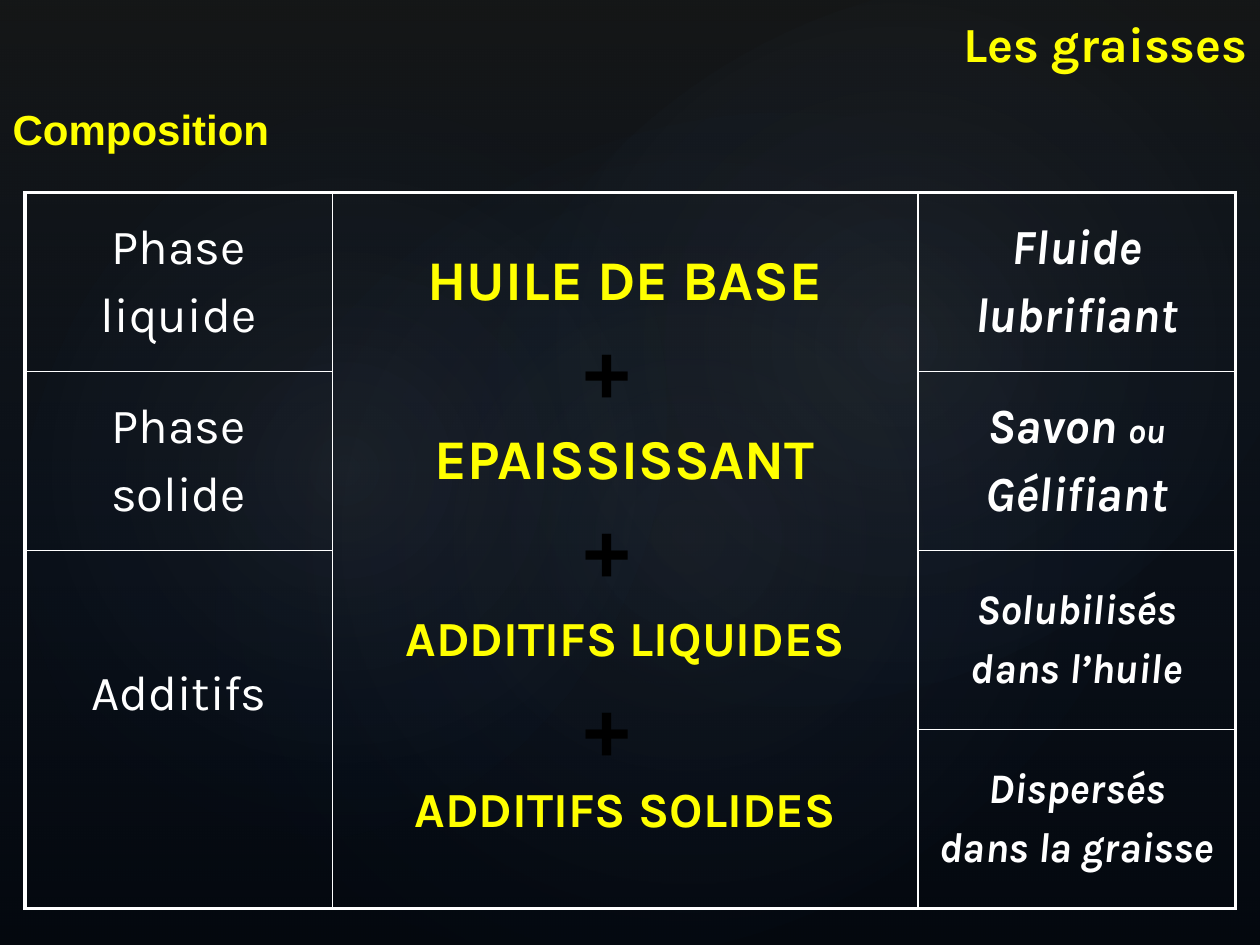
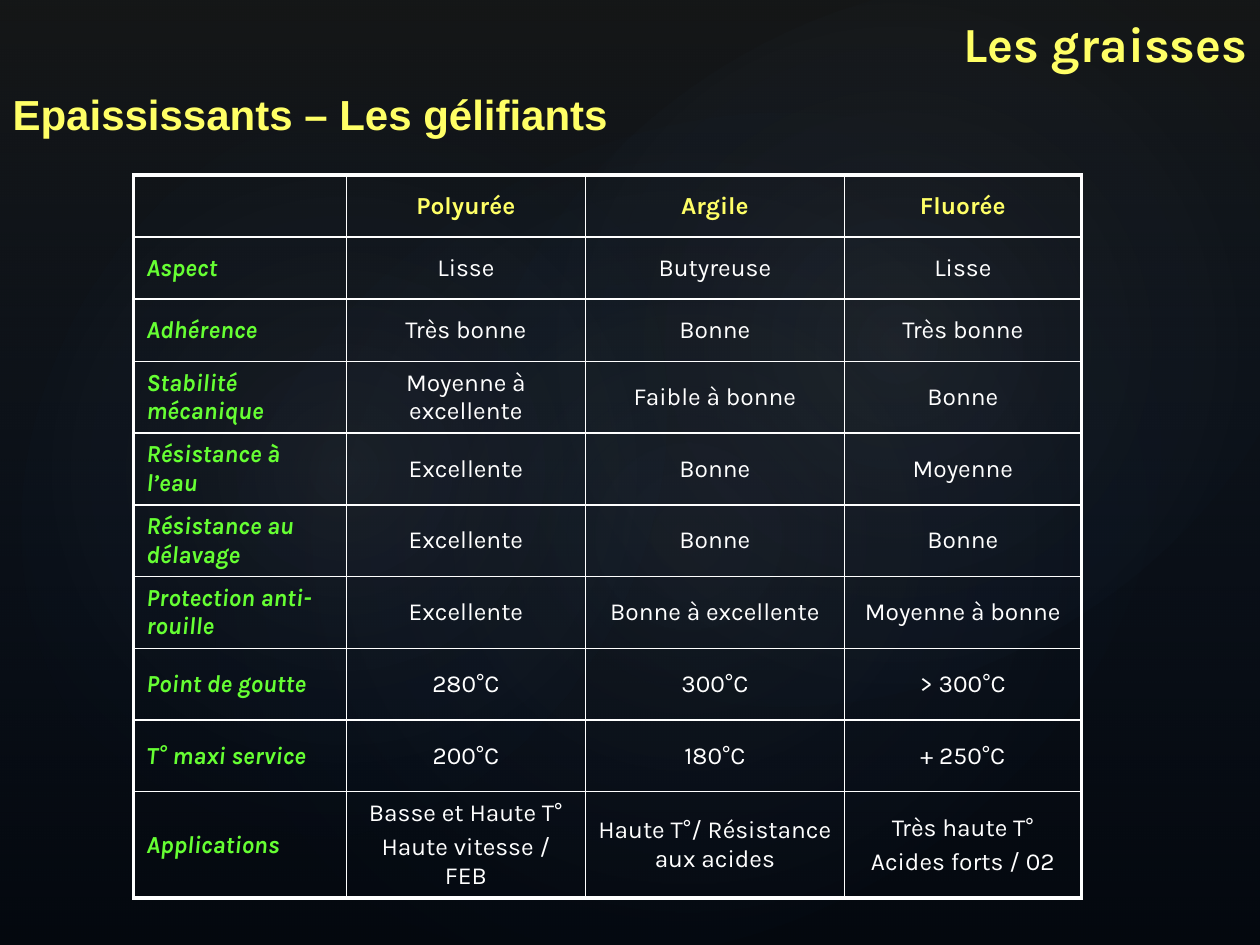
"""Build two slides on the composition and the thickeners of greases."""
from lxml import etree
from pptx import Presentation
from pptx import util as u
from pptx.dml.color import RGBColor
from pptx.enum import shapes, text
from pptx.oxml import ns, parse_xml

Pt = u.Pt
HUES = {"black": "000000", "white": "FFFFFF", "yellow": "FFFF00", "lemon": "FFFF66",
        "green": "66FF33", "grey": "3B4042", "blue": "2F5897", "mist": "ACB3B6"}
PLAIN = "{2D5ABB26-0587-4C30-8999-92F81FD0307C}"
HEAD = "Les graisses"

PARTS = [
    ("Phase\nliquide", "HUILE DE BASE", "Fluide\nlubrifiant"),
    ("Phase\nsolide", "EPAISSISSANT", "Savon \nGélifiant"),
    ("Additifs", "ADDITIFS LIQUIDES", "Solubilisés\ndans l’huile"),
    ("", "ADDITIFS SOLIDES", "Dispersés\ndans la graisse"),
]
SIZES = [(28, 32, 28), (28, 32, 28), (28, 28, 24), (28, 28, 24)]
OPEN = {(0, 1), (1, 1), (2, 1), (2, 0)}

GELS = [
    ("", "Polyurée", "Argile", "Fluorée"),
    ("Aspect", "Lisse", "Butyreuse", "Lisse"),
    ("Adhérence", "Très bonne", "Bonne", "Très bonne"),
    ("Stabilité mécanique", "Moyenne à excellente", "Faible à bonne", "Bonne"),
    ("Résistance à l’eau", "Excellente", "Bonne", "Moyenne"),
    ("Résistance au délavage", "Excellente", "Bonne", "Bonne"),
    ("Protection anti-rouille", "Excellente", "Bonne à excellente", "Moyenne à bonne"),
    ("Point de goutte", "280°C", "300°C", "> 300°C"),
    ("T° maxi service", "200°C", "180°C", "+ 250°C"),
    ("Applications", "Basse et Haute T°\nHaute vitesse / FEB",
     "Haute T°/ Résistance aux acides", "Très haute T°\nAcides forts / 02"),
]

GLOWS = [
    ((108, 82, 570, 449), 328.7, 7),
    ((-21.6, 92, 436, 353), 294.3, 8),
    ((257.8, 9.4, 510.5, 374.4), 328.7, 8),
]


def style(run, hue, **form):
    run.font.color.rgb = RGBColor.from_string(HUES[hue])
    for key, val in form.items():
        setattr(run.font, key, val)


def write(frame, words, align, gap=0, **form):
    frame.vertical_anchor = text.MSO_ANCHOR.MIDDLE
    for num, line in enumerate(words.split("\n")):
        para = frame.add_paragraph() if num else frame.paragraphs[0]
        para.alignment = align
        para.space_before = Pt(gap)
        run = para.add_run()
        run.text = line
        style(run, **form)


def blend(shape, stops, tail):
    shape.shadow.inherit = False
    shape.line.fill.background()
    shape.fill.background()
    body = "".join(
        f'<a:gs pos="{pos * 1000}"><a:srgbClr val="{HUES[hue]}">'
        f'<a:alpha val="{alpha * 1000}"/></a:srgbClr></a:gs>' for pos, hue, alpha in stops)
    grad = parse_xml(f'<a:gradFill {ns.nsdecls("a")} rotWithShape="1">'
                     f'<a:gsLst>{body}</a:gsLst>{tail}</a:gradFill>')
    old = shape.element.spPr.find(ns.qn("a:noFill"))
    old.getparent().replace(old, grad)


def backdrop(deck, slide):
    master = deck.slide_master
    master.background.fill.solid()
    master.background.fill.fore_color.rgb = RGBColor.from_string(HUES["black"])
    kinds = shapes.MSO_SHAPE
    veil = slide.shapes.add_shape(kinds.RECTANGLE, 0, 0, deck.slide_width, deck.slide_height)
    blend(veil, [(0, "grey", 36), (100, "blue", 10)], '<a:lin ang="5400000" scaled="0"/>')
    layers = [veil]
    for box, turn, alpha in GLOWS:
        glow = slide.shapes.add_shape(kinds.OVAL, *map(Pt, box))
        glow.rotation = turn
        blend(glow, [(0, "mist", alpha), (58, "blue", 0)],
              '<a:path path="circle"><a:fillToRect l="50000" t="50000" r="50000" b="50000"/></a:path>')
        layers.append(glow)
    for num, shape in enumerate(layers):
        shape.element.nvSpPr.cNvPr.set("id", str(100 + num))
        master.shapes.element.insert(2 + num, shape.element)


def heads(slide, title, top, high, hue):
    name = slide.shapes.title
    name.left, name.top, name.width, name.height = 0, Pt(top), Pt(720), Pt(high)
    write(name.text_frame, title, text.PP_ALIGN.LEFT, hue=hue, name="Arial", size=Pt(24), bold=True)
    band = slide.shapes.add_textbox(Pt(507.6), 0, Pt(212.4), Pt(49))
    band.text_frame.word_wrap = True
    write(band.text_frame, HEAD, text.PP_ALIGN.RIGHT, hue=hue, name="Karla", size=Pt(28), bold=True)


def edge(cell, sides):
    props = cell._tc.get_or_add_tcPr()
    for num, (side, wide) in enumerate(zip("LRTB", sides)):
        line = etree.Element(ns.qn(f"a:ln{side}"), w=str(Pt(wide)))
        if wide:
            fill = etree.SubElement(line, ns.qn("a:solidFill"))
            etree.SubElement(fill, ns.qn("a:srgbClr"), val=HUES["white"])
        else:
            etree.SubElement(line, ns.qn("a:noFill"))
        props.insert(num, line)


def grid(slide, spot, wides, highs, data, form, gaps=()):
    frame = slide.shapes.add_table(len(highs), len(wides), *map(Pt, (*spot, sum(wides), sum(highs))))
    tab = frame.table
    tab.first_row = tab.horz_banding = False
    frame.element.find(".//" + ns.qn("a:tableStyleId")).text = PLAIN
    for col, wide in zip(tab.columns, wides):
        col.width = Pt(wide)
    for row, high in zip(tab.rows, highs):
        row.height = Pt(high)
    for r, line in enumerate(data):
        for c, words in enumerate(line):
            cell = tab.cell(r, c)
            cell.fill.background()
            edge(cell, (1 if c else 2.25,
                        1 if c < len(wides) - 1 else 2.25,
                        (0 if (r - 1, c) in gaps else 1) if r else 2.25,
                        (0 if (r, c) in gaps else 1) if r < len(highs) - 1 else 2.25))
            cell.vertical_anchor = text.MSO_ANCHOR.MIDDLE
            if words:
                size, align, looks = form(r, c)
                write(cell.text_frame, words, align, round(size * 0.22, 2),
                      name="Karla", size=Pt(size), **looks)
    return tab


def phase(r, c):
    looks = [{"hue": "white", "bold": False},
             {"hue": "yellow", "bold": True},
             {"hue": "white", "bold": True, "italic": True}]
    return SIZES[r][c], text.PP_ALIGN.CENTER, looks[c]


def trait(r, c):
    if not r:
        return 14, text.PP_ALIGN.CENTER, {"hue": "lemon", "bold": True}
    if not c:
        return 14, text.PP_ALIGN.LEFT, {"hue": "green", "bold": True, "italic": True}
    return 14, text.PP_ALIGN.CENTER, {"hue": "white", "bold": False}


def blends(slide):
    heads(slide, "Composition", 55, 37.5, "yellow")
    step = 102.3
    tab = grid(slide, (14.2, 110), (175.7, 334.6, 181.4), [step] * 4, PARTS, phase, OPEN)
    tab.cell(2, 0).vertical_anchor = text.MSO_ANCHOR.BOTTOM
    tab.cell(3, 1).margin_bottom = Pt(13)
    small = tab.cell(1, 2).text_frame.paragraphs[0].add_run()
    small.text = "ou"
    style(small, "white", name="Karla", size=Pt(20), bold=True, italic=True)
    for num in range(3):
        plus = slide.shapes.add_textbox(Pt(326), Pt(179.5 + num * step), Pt(41), Pt(65))
        plus.text_frame.word_wrap = False
        write(plus.text_frame, "+", text.PP_ALIGN.CENTER,
              hue="black", name="Arial", size=Pt(48), bold=True)


def thick(slide):
    heads(slide, "Epaississants – Les gélifiants", 43, 43.5, "lemon")
    grid(slide, (76.4, 100), (121.6, 136.6, 148, 135.4),
         [35.5] * 3 + [41] * 6 + [44.6], GELS, trait)


def main():
    deck = Presentation()
    deck.slide_width, deck.slide_height = Pt(720), Pt(540)
    for num, build in enumerate((blends, thick)):
        slide = deck.slides.add_slide(deck.slide_layouts[5])
        if not num:
            backdrop(deck, slide)
        build(slide)
    deck.save("out.pptx")


if __name__ == "__main__":
    main()
